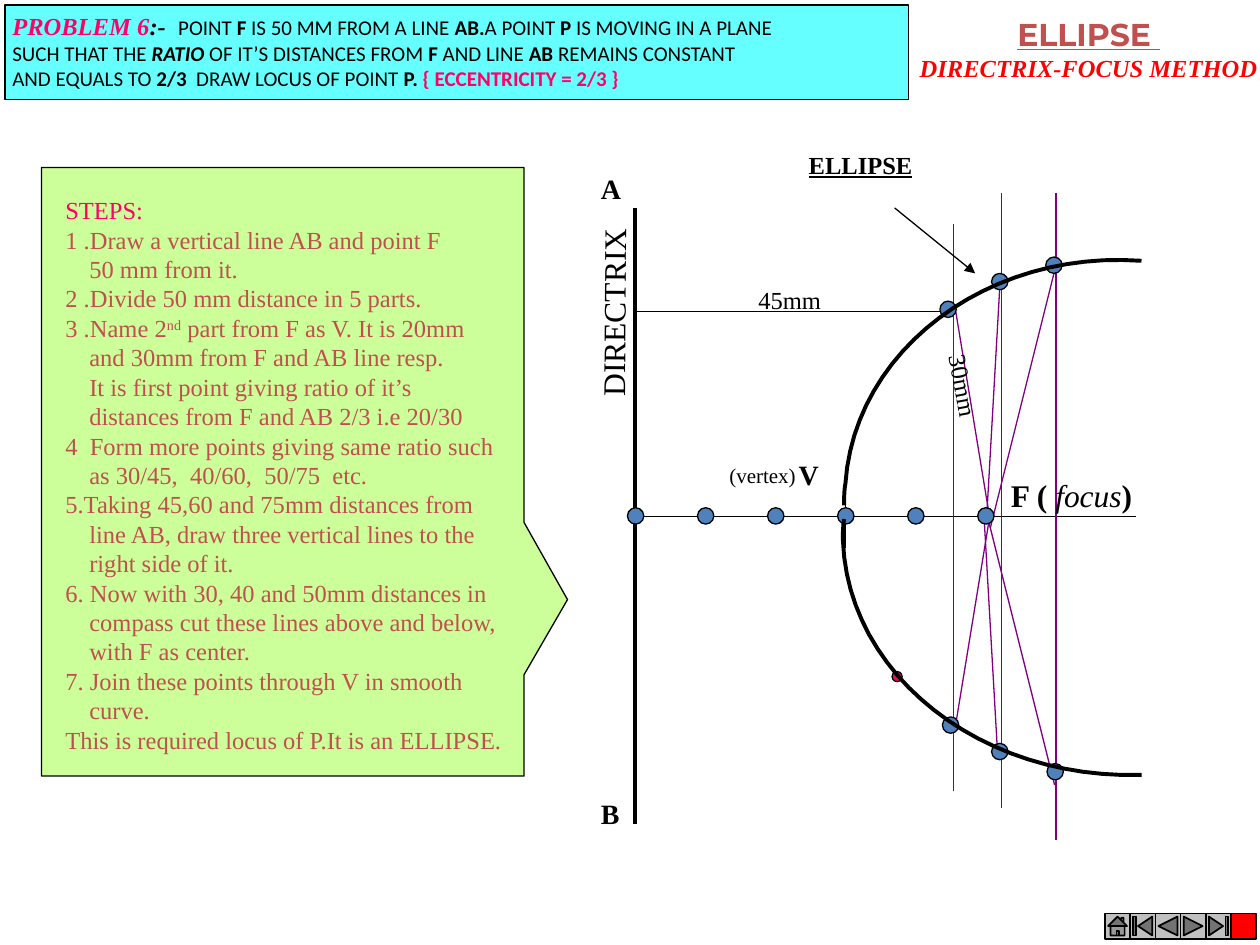
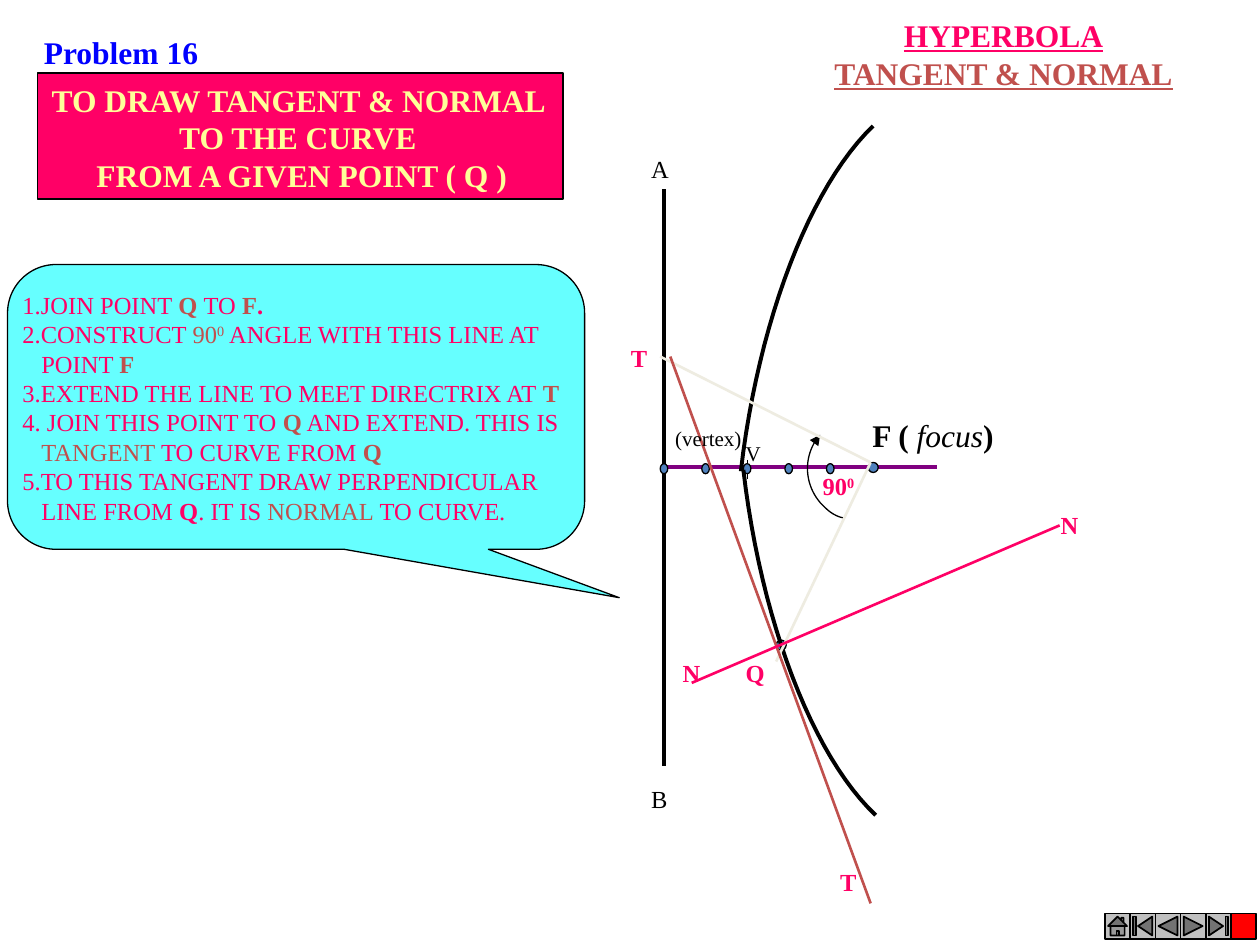
from lxml import etree
from pptx import Presentation
from pptx.dml.color import RGBColor
from pptx.enum.shapes import MSO_CONNECTOR, MSO_SHAPE
from pptx.enum.text import MSO_AUTO_SIZE, PP_ALIGN
from pptx.oxml.ns import qn
from pptx.util import Inches, Pt

BLACK = RGBColor(0, 0, 0)
PINK = RGBColor(0xFF, 0, 0x66)
RED = RGBColor(0xFF, 0, 0)
BRICK = RGBColor(0xC0, 0x50, 0x4D)
BLUE = RGBColor(0x4F, 0x81, 0xBD)
PURE_BLUE = RGBColor(0, 0, 0xFF)
CYAN = RGBColor(0x66, 0xFF, 0xFF)
LIME = RGBColor(0xCC, 0xFF, 0x99)
CREAM = RGBColor(0xFF, 0xFF, 0x99)
PURPLE = RGBColor(0x80, 0, 0x80)
IVORY = RGBColor(0xEE, 0xEC, 0xE1)
GREY = RGBColor(0xC0, 0xC0, 0xC0)
SERIF, SANS, DISPLAY = "Times New Roman", "Calibri", "Montserrat"
LEFT, CENTER = PP_ALIGN.LEFT, PP_ALIGN.CENTER
RECT, OVAL = MSO_SHAPE.RECTANGLE, MSO_SHAPE.OVAL
STRAIGHT = MSO_CONNECTOR.STRAIGHT
FIT_SHAPE = MSO_AUTO_SIZE.SHAPE_TO_FIT_TEXT
NAV_BUTTONS = [
    (MSO_SHAPE.ACTION_BUTTON_HOME, GREY),
    (MSO_SHAPE.ACTION_BUTTON_BEGINNING, GREY),
    (MSO_SHAPE.ACTION_BUTTON_BACK_OR_PREVIOUS, GREY),
    (MSO_SHAPE.ACTION_BUTTON_FORWARD_OR_NEXT, GREY),
    (MSO_SHAPE.ACTION_BUTTON_END, GREY),
    (MSO_SHAPE.ACTION_BUTTON_CUSTOM, RED),
]


def outline(shape, color, width, arrow=False):
    shape.line.color.rgb = color
    shape.line.width = Pt(width)
    properties = shape._element.spPr
    if arrow:
        etree.SubElement(properties.find(qn("a:ln")), qn("a:tailEnd"), type="triangle")
    etree.SubElement(properties, qn("a:effectLst"))


def write(slide, box, paragraphs, flags="", color=BLACK, size=14, font=SERIF,
          align=LEFT, wrap=False, rotation=0, margins=None):
    textbox = slide.shapes.add_textbox(*map(Inches, box))
    textbox.rotation = rotation
    frame = textbox.text_frame
    frame.word_wrap = wrap
    frame.auto_size = FIT_SHAPE
    defaults = (flags, color, size, font)
    for i, runs in enumerate(paragraphs):
        paragraph = frame.add_paragraph() if i else frame.paragraphs[0]
        paragraph.alignment = align
        if margins and margins[i]:
            paragraph._p.get_or_add_pPr().set("marL", str(Inches(margins[i])))
        for item in runs:
            text, *own = item if isinstance(item, tuple) else (item,)
            style, ink, points, face = (*own, *defaults[len(own):])
            run = paragraph.add_run()
            run.text = text
            run.font.name = face
            run.font.size = Pt(points)
            run.font.color.rgb = ink
            run.font.bold = "b" in style
            run.font.italic = "i" in style
            run.font.underline = "u" in style
            if "^" in style:
                run.font._element.set("baseline", "30000")


deck = Presentation()
deck.slide_width, deck.slide_height = Inches(10), Inches(7.5)
ellipse, hyperbola = [deck.slides.add_slide(deck.slide_layouts[6]) for _ in range(2)]

panels = [
    (ellipse, RECT, (0.04, 0.04, 7.17, 0.75), CYAN, ()),
    (ellipse, MSO_SHAPE.RECTANGULAR_CALLOUT, (0.33, 1.33, 3.83, 4.83), LIME, (0.59, 0.21)),
    (hyperbola, RECT, (0.3, 0.58, 4.17, 1), PINK, ()),
    (hyperbola, MSO_SHAPE.ROUNDED_RECTANGULAR_CALLOUT, (0.06, 2.1, 4.58, 2.26), CYAN,
     (0.56, 0.67, 0.17)),
]
for slide, kind, box, fill, pointer in panels:
    panel = slide.shapes.add_shape(kind, *map(Inches, box))
    panel.fill.solid()
    panel.fill.fore_color.rgb = fill
    outline(panel, BLACK, 0.75)
    for i, value in enumerate(pointer):
        panel.adjustments[i] = value

axes_and_rays = [
    (ellipse, (5.04, 1.65, 5.04, 6.54), BLACK, 2.25),
    (ellipse, (5.04, 4.1, 9.02, 4.1), BLACK, 0.75),
    (ellipse, (6.71, 3.84, 6.71, 4.35), BLACK, 0.75),
    (ellipse, (7.54, 2.47, 5.04, 2.47), BLACK, 0.75),
    (ellipse, (7.57, 6.28, 7.57, 1.78), PURPLE, 0.75),
    (ellipse, (7.85, 4.08, 7.58, 2.44), PURPLE, 0.75),
    (ellipse, (7.85, 4.13, 7.58, 5.78), PURPLE, 0.75),
    (ellipse, (7.95, 1.53, 7.95, 6.41), PURPLE, 0.75),
    (ellipse, (7.83, 4.12, 7.94, 2.19), PURPLE, 0.75),
    (ellipse, (7.81, 4.1, 7.92, 6.02), PURPLE, 0.75),
    (ellipse, (8.38, 1.53, 8.38, 6.67), PURPLE, 0.75),
    (ellipse, (7.86, 4.19, 8.39, 2.07), PURPLE, 0.75),
    (ellipse, (7.84, 4.11, 8.37, 6.23), PURPLE, 0.75),
    (hyperbola, (5.27, 1.5, 5.27, 6.08), BLACK, 2.25),
    (hyperbola, (5.27, 3.71, 7.44, 3.71), PURPLE, 2.25),
    (hyperbola, (5.93, 3.65, 5.93, 3.8), BLACK, 0.75),
]
for slide, ends, color, width in axes_and_rays:
    outline(slide.shapes.add_connector(STRAIGHT, *map(Inches, ends)), color, width)

dots = [(ellipse, 4.98 + 2.78 / 5 * i, 4.03, 0.13, 0.13, BLUE) for i in range(6)]
dots += [(ellipse, x, y, 0.13, 0.13, BLUE) for x, y in (
    (7.46, 2.39), (7.87, 2.17), (8.3, 2.04), (7.48, 5.69), (7.87, 5.9), (8.31, 6.06))]
dots += [(hyperbola, 5.24 + 0.33 * i, 3.68, 0.06, 0.08, BLUE) for i in range(5)]
dots += [
    (hyperbola, 6.89, 3.67, 0.08, 0.08, BLUE),
    (hyperbola, 6.16, 5.08, 0.08, 0.08, BLUE),
    (ellipse, 7.08, 5.33, 0.08, 0.08, PINK),
]
for slide, *box, fill in dots:
    dot = slide.shapes.add_shape(OVAL, *map(Inches, box))
    dot.fill.solid()
    dot.fill.fore_color.rgb = fill
    outline(dot, BLACK, 0.75)

curves = [
    (ellipse, 2.25, False, [(9.06, 2.07), (7.84, 1.98), (6.78, 2.78), (6.71, 3.84),
                            (6.7, 3.89), (6.7, 3.95), (6.7, 4.01)]),
    (ellipse, 2.25, False, [(9.06, 6.15), (7.79, 6.19), (6.73, 5.36), (6.69, 4.29),
                            (6.69, 4.23), (6.69, 4.18), (6.7, 4.12)]),
    (hyperbola, 2.25, False, [(6.95, 6.47), (6.45, 6), (6.04, 4.93), (5.9, 3.73)]),
    (hyperbola, 2.25, False, [(6.93, 1), (6.43, 1.48), (6.02, 2.54), (5.88, 3.74)]),
    (hyperbola, 0.75, True, [(6.69, 4.11), (6.64, 4.1), (6.59, 4.07), (6.55, 4.03),
                             (6.38, 3.88), (6.36, 3.62), (6.51, 3.45)]),
]
STEPS_PER_ARC = 24
for slide, width, arrow, controls in curves:
    points = []
    for start in range(0, len(controls) - 1, 3):
        arc = controls[start:start + 4]
        for step in range(1, STEPS_PER_ARC + 1):
            t = step / STEPS_PER_ARC
            weights = ((1 - t) ** 3, 3 * t * (1 - t) ** 2, 3 * t * t * (1 - t), t ** 3)
            points.append([Inches(sum(w * p[axis] for w, p in zip(weights, arc)))
                           for axis in (0, 1)])
    builder = slide.shapes.build_freeform(*map(Inches, controls[0]))
    builder.add_line_segments(points, close=False)
    curve = builder.convert_to_shape()
    curve.fill.background()
    outline(curve, BLACK, width, arrow)

pointer = ellipse.shapes.add_connector(STRAIGHT, *map(Inches, (7.1, 1.65, 7.74, 2.17)))
outline(pointer, BLACK, 0.75, arrow=True)
tangent_and_normal = [
    ((6.16, 5.25, 6.91, 3.67), IVORY),
    ((6.91, 3.67, 5.24, 2.83), IVORY),
    ((5.32, 2.83, 6.91, 7.17), BRICK),
    ((5.49, 5.42, 8.41, 4.17), PINK),
]
for ends, color in tangent_and_normal:
    outline(hyperbola.shapes.add_connector(STRAIGHT, *map(Inches, ends)), color, 1.5)

write(ellipse, (7.2, 0.07, 2.88, 0.63), [
    [("ELLIPSE ", "bu", BRICK, 18, DISPLAY)],
    [("DIRECTRIX-FOCUS METHOD", "bi", RED)],
], align=CENTER)
write(ellipse, (0, 0.04, 7.33, 0.73), [
    [("PROBLEM 6", "bi", PINK, 14, SERIF), (":-  ", "bi", BLACK, 14, SERIF), "POINT ", ("F", "b"),
     " IS 50 MM FROM A LINE ", ("AB.", "b"), "A POINT", (" P ", "b"), "IS MOVING IN A PLANE"],
    ["SUCH THAT THE ", ("RATIO", "bi"), " OF IT’S DISTANCES FROM ", ("F", "b"), " AND LINE ",
     ("AB ", "b"), "REMAINS CONSTANT"],
    ["AND EQUALS TO ", ("2/3  ", "b"), "DRAW LOCUS OF POINT ", ("P.", "b"),
     (" { ECCENTRICITY = 2/3 }", "b", PINK)],
], size=12, font=SANS)

steps = [
    [[("STEPS:", "", PINK)]],
    [["1 .Draw a vertical line AB and point F"], ["50 mm from it."]],
    [["2 .Divide 50 mm distance in 5 parts."]],
    [["3 .Name 2", ("nd", "^"), " part from F as V. It is 20mm"],
     ["and 30mm from F and AB line resp."],
     ["It is first point giving ratio of it’s"],
     ["distances from F and AB 2/3 i.e 20/30"]],
    [["4  Form more points giving same ratio such"], ["as 30/45,  40/60,  50/75  etc."]],
    [["5.Taking 45,60 and 75mm distances from"],
     ["line AB, draw three vertical lines to the"], ["right side of it."]],
    [["6. Now with 30, 40 and 50mm distances in"],
     ["compass cut these lines above and below,"], ["with F as center."]],
    [["7. Join these points through V in smooth"], ["curve."]],
    [["This is required locus of P.It is an ELLIPSE."]],
]
write(ellipse, (0.42, 1.5, 3.75, 4.52), [line for step in steps for line in step],
      color=BRICK, wrap=True,
      margins=[0.19 if i else 0 for step in steps for i in range(len(step))])

write(hyperbola, (6.51, 0.08, 2.91, 0.7), [["HYPERBOLA"], [("TANGENT & NORMAL", "bu", BRICK)]],
      "bu", PINK, 18, align=CENTER)
write(hyperbola, (0.25, 0.21, 1.43, 0.4), [["Problem 16"]], "b", PURE_BLUE, 18)
write(hyperbola, (0.27, 0.59, 4.25, 1), [
    ["TO DRAW TANGENT & NORMAL "], ["TO THE CURVE "], ["FROM A GIVEN POINT ( Q )"],
], "b", CREAM, 18, align=CENTER)
write(hyperbola, (0.08, 2.25, 4.52, 2.19), [
    ["1.JOIN POINT ", ("Q ", "b", BRICK), "TO ", ("F", "b", BRICK), (".", "b")],
    ["2.CONSTRUCT ", ("90", "", BRICK), ("0", "^", BRICK), " ANGLE WITH THIS LINE AT"],
    ["POINT ", ("F", "b", BRICK)],
    ["3.EXTEND THE LINE TO MEET DIRECTRIX AT ", ("T", "b", BRICK)],
    ["4. JOIN THIS POINT TO ", ("Q", "b", BRICK), " AND EXTEND. THIS IS"],
    [("TANGENT", "", BRICK), " TO CURVE FROM ", ("Q", "b", BRICK)],
    ["5.TO THIS TANGENT DRAW PERPENDICULAR"],
    ["LINE FROM ", ("Q", "b"), ". IT IS", (" NORMAL", "", BRICK), " TO CURVE."],
], color=PINK, margins=(0, 0, 0.15, 0, 0, 0.15, 0, 0.15))

for slide, box in ((ellipse, (7.92, 3.73, 1.17, 0.4)), (hyperbola, (6.82, 3.25, 1.17, 0.4))):
    write(slide, box, [["F ( ", ("focus", "i"), ")"]], "b", size=18, align=CENTER)
write(ellipse, (4.1, 2.28, 1.53, 0.4), [["DIRECTRIX"]], size=18, rotation=270.3)
write(ellipse, (7.3, 2.9, 0.7, 0.33), [["30mm"]], rotation=79.5)
write(ellipse, (6.32, 1.14, 2.44, 0.33), [["ELLIPSE"]], "bu", wrap=True)

labels = [
    (ellipse, "V", (6.24, 3.58, 0.36, 0.37), "b", BLACK, 16),
    (ellipse, "A", (4.67, 1.31, 0.36, 0.37), "b", BLACK, 16),
    (ellipse, "B", (4.67, 6.27, 0.35, 0.37), "b", BLACK, 16),
    (ellipse, "(vertex)", (5.69, 3.62, 0.73, 0.3), "", BLACK, 12),
    (ellipse, "45mm", (5.92, 2.21, 0.7, 0.33), "", BLACK, 14),
    (hyperbola, "V", (5.82, 3.45, 0.32, 0.3), "", BLACK, 12),
    (hyperbola, "(vertex)", (5.26, 3.33, 0.75, 0.3), "", BLACK, 12),
    (hyperbola, "A", (5.07, 1.17, 0.34, 0.33), "", BLACK, 14),
    (hyperbola, "B", (5.07, 6.17, 0.33, 0.33), "", BLACK, 14),
    (hyperbola, "Q", (5.82, 5.17, 0.35, 0.33), "b", PINK, 14),
    (hyperbola, "N", (5.32, 5.17, 0.34, 0.33), "b", PINK, 14),
    (hyperbola, "N", (8.32, 4, 0.34, 0.33), "b", PINK, 14),
    (hyperbola, "T", (4.91, 2.67, 0.33, 0.33), "b", PINK, 14),
    (hyperbola, "T", (6.57, 6.83, 0.33, 0.33), "b", PINK, 14),
]
for slide, text, box, flags, color, size in labels:
    write(slide, box, [[text]], flags, color, size)
write(hyperbola, (6.43, 3.69, 0.46, 0.33), [["90", ("0", "b^")]], "b", PINK)

for slide in (ellipse, hyperbola):
    for i, (kind, fill) in enumerate(NAV_BUTTONS):
        button = slide.shapes.add_shape(kind, *map(Inches, (8.77 + 0.2 * i, 7.25, 0.2, 0.2)))
        button.fill.solid()
        button.fill.fore_color.rgb = fill
        outline(button, BLACK, 1)

deck.save("out.pptx")
